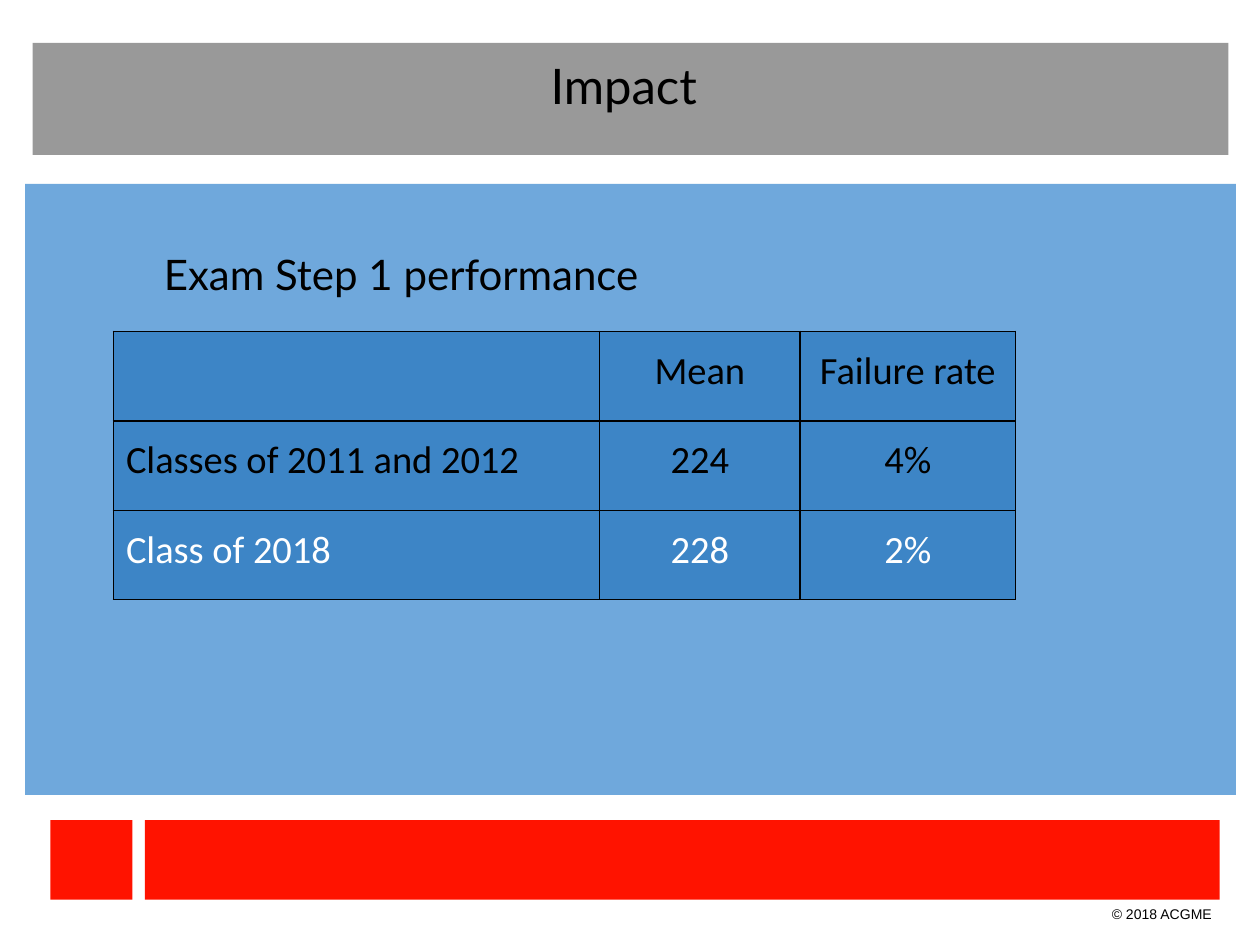
from lxml.etree import SubElement
from pptx import Presentation
from pptx.dml.color import RGBColor
from pptx.enum.shapes import MSO_SHAPE as SHAPE
from pptx.enum.text import MSO_ANCHOR as ANCHOR, PP_ALIGN as ALIGN
from pptx.oxml.ns import qn
from pptx.util import Inches, Pt

BLACK, WHITE, RED, GREY = "000000", "FFFFFF", "FF1300", "999999"
PANEL, CELL = "6FA8DC", "3D85C6"

TITLE = "Impact"
HEADING = "Exam Step 1 performance"
COPYRIGHT = "© 2018 ACGME"
ROWS = [
    (BLACK, ("", "Mean", "Failure rate")),
    (BLACK, ("Classes of 2011 and 2012", "224", "4%")),
    (WHITE, ("Class of 2018", "228", "2%")),
]
COL_WIDTHS = (3.86, 1.59, 1.71)
ROW_HEIGHT = 0.71
FOOTER_BARS = [(1.15, 8.53), (0.4, 0.65)]


def rgb(color):
    return RGBColor.from_string(color)


def add_text(tf, text, size, font, color=BLACK, align=ALIGN.LEFT):
    p = tf.paragraphs[0]
    p.alignment = align
    r = p.add_run()
    r.text = text
    r.font.size = Pt(size)
    r.font.name = font
    r.font.color.rgb = rgb(color)


def set_margins(obj, left, top, right, bottom):
    obj.margin_left, obj.margin_top = Inches(left), Inches(top)
    obj.margin_right, obj.margin_bottom = Inches(right), Inches(bottom)


def add_rect(s, left, top, width, height, fill):
    sp = s.shapes.add_shape(SHAPE.RECTANGLE, Inches(left), Inches(top),
                            Inches(width), Inches(height))
    sp.shadow.inherit = False
    sp.fill.solid()
    sp.fill.fore_color.rgb = rgb(fill)
    sp.line.fill.background()
    sp.text_frame.word_wrap = True
    sp.text_frame.vertical_anchor = ANCHOR.TOP
    return sp


def add_borders(cell, color):
    tcPr = cell._tc.get_or_add_tcPr()
    for i, side in enumerate(("lnL", "lnR", "lnT", "lnB")):
        ln = tcPr.makeelement(qn(f"a:{side}"), {"w": str(Pt(1))})
        tcPr.insert(i, ln)
        fill = SubElement(ln, qn("a:solidFill"))
        SubElement(fill, qn("a:srgbClr"), val=color)


def add_results(s, left, top):
    table = s.shapes.add_table(
        len(ROWS), len(COL_WIDTHS), Inches(left), Inches(top),
        Inches(sum(COL_WIDTHS)), Inches(ROW_HEIGHT * len(ROWS))).table
    table.first_row = table.horz_banding = False
    for column, width in zip(table.columns, COL_WIDTHS):
        column.width = Inches(width)
    for i, (color, texts) in enumerate(ROWS):
        table.rows[i].height = Inches(ROW_HEIGHT)
        for j, text in enumerate(texts):
            cell = table.cell(i, j)
            cell.fill.solid()
            cell.fill.fore_color.rgb = rgb(CELL)
            set_margins(cell, 0.1, 0.13, 0.1, 0.13)
            add_borders(cell, BLACK)
            if text:
                add_text(cell.text_frame, text, 22, "Calibri", color,
                         ALIGN.CENTER if j else ALIGN.LEFT)


def main():
    prs = Presentation()
    prs.slide_width, prs.slide_height = Inches(10), Inches(7.5)
    s = prs.slides.add_slide(prs.slide_layouts[6])

    for left, width in FOOTER_BARS:
        add_rect(s, left, 6.51, width, 0.63, RED)
    tf = s.shapes.add_textbox(Inches(8.71), Inches(7.14),
                              Inches(1.07), Inches(0.24)).text_frame
    tf.word_wrap = False
    set_margins(tf, 0.1, 0.05, 0.16, 0.05)
    add_text(tf, COPYRIGHT, 8, "Arial", align=ALIGN.RIGHT)

    tf = add_rect(s, 0.26, 0.34, 9.49, 0.89, GREY).text_frame
    set_margins(tf, 4.11, 0.1, 0.1, 0.1)
    add_text(tf, TITLE, 28, "Lato")

    tf = add_rect(s, 0.2, 1.46, 9.61, 4.85, PANEL).text_frame
    set_margins(tf, 1.1, 0.51, 0.1, 0.1)
    add_text(tf, HEADING, 24, "Lato")

    add_results(s, 0.9, 2.63)
    prs.save("out.pptx")


if __name__ == "__main__":
    main()
